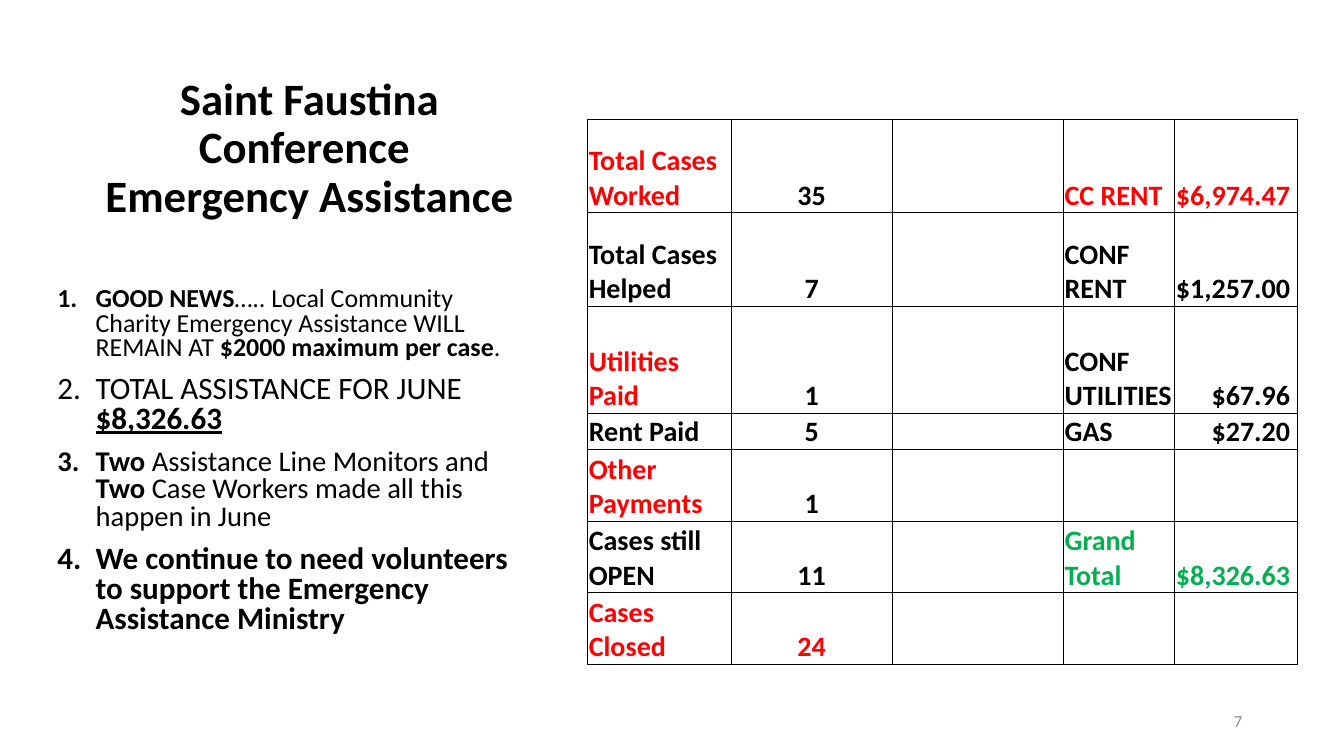
from pptx import Presentation
from pptx.util import Emu, Pt
from pptx.dml.color import RGBColor
from pptx.enum.text import MSO_ANCHOR, PP_ALIGN
from pptx.oxml.ns import qn
from lxml.etree import SubElement

RED, BLACK, GREEN, GREY = "FF0000", "000000", "00B050", "8C8C8C"
LEFT, MID, RIGHT = PP_ALIGN.LEFT, PP_ALIGN.CENTER, PP_ALIGN.RIGHT
TITLE = "Saint Faustina Conference \vEmergency Assistance"
NOTES = [
    (18.5, [("GOOD NEWS", "b"),
            ("….. Local Community Charity Emergency Assistance WILL REMAIN AT ", ""),
            ("$2000 maximum per case", "b"), (".", "")]),
    (22.2, [("TOTAL ASSISTANCE FOR JUNE ", ""), ("$8,326.63", "bu")]),
    (20.4, [("Two", "b"), (" Assistance Line Monitors and ", ""), ("Two", "b"),
            (" Case Workers made all this happen in June", "")]),
    (22.2, [("We continue to need volunteers to support the Emergency Assistance Ministry", "b")]),
]
CASES = [
    ("Total Cases Worked", RED, "35", BLACK, "CC RENT", "$6,974.47 ", RED),
    ("Total Cases Helped", BLACK, "7", BLACK, "CONF RENT", "$1,257.00 ", BLACK),
    ("Utilities Paid", RED, "1", BLACK, "CONF UTILITIES", "$67.96 ", BLACK),
    ("Rent Paid", BLACK, "5", BLACK, "GAS", "$27.20 ", BLACK),
    ("Other Payments", RED, "1", BLACK, "", "", BLACK),
    ("Cases still OPEN", BLACK, "11", BLACK, "Grand Total", "$8,326.63 ", GREEN),
    ("Cases Closed", RED, "24", RED, "", "", BLACK),
]
WIDTHS = [142, 160, 170, 110, 122]
HEIGHTS = [93, 93, 106, 36, 71, 71, 71]


def px(n):
    return Emu(n * 9144)


def hue(code):
    return RGBColor.from_string(code)


def style(para, size, color, bold=None, align=LEFT):
    para.alignment = align
    font = para.font
    font.name, font.size, font.bold = "Calibri", Pt(size), bold
    font.color.rgb = hue(color)


def box(slide, x, y, w, h, anchor):
    frame = slide.shapes.add_textbox(px(x), px(y), px(w), px(h)).text_frame
    frame.word_wrap = True
    frame.vertical_anchor = anchor
    return frame


def number(para):
    props = para._p.get_or_add_pPr()
    props.set("marL", str(px(38)))
    props.set("indent", str(-px(38)))
    SubElement(props, qn("a:buFont"), typeface="+mj-lt")
    SubElement(props, qn("a:buAutoNum"), type="arabicPeriod")


def border(cell):
    props = cell._tc.get_or_add_tcPr()
    for side in "LRTB":
        line = SubElement(props, qn("a:ln" + side), w=str(Pt(0.5)))
        fill = SubElement(line, qn("a:solidFill"))
        SubElement(fill, qn("a:srgbClr"), val=BLACK)


def add_notes(slide):
    frame = box(slide, 47, 280, 488, 362, MSO_ANCHOR.TOP)
    for i, (size, runs) in enumerate(NOTES):
        para = frame.add_paragraph() if i else frame.paragraphs[0]
        para.line_spacing = 0.8
        if i:
            para.space_before = Pt(10)
        number(para)
        style(para, size, BLACK)
        for text, marks in runs:
            run = para.add_run()
            run.text = text
            run.font.bold = "b" in marks
            if "u" in marks:
                run.font.underline = True


def add_cases(slide):
    table = slide.shapes.add_table(len(HEIGHTS), len(WIDTHS), px(583), px(118),
                                   px(sum(WIDTHS)), px(sum(HEIGHTS))).table
    table.first_row = table.horz_banding = False
    for col, w in zip(table.columns, WIDTHS):
        col.width = px(w)
    for row, h, case in zip(table.rows, HEIGHTS, CASES):
        row.height = px(h)
        label, tint, count, shade, kind, cost, tone = case
        parts = [(label, tint, LEFT), (count, shade, MID), ("", BLACK, LEFT),
                 (kind, tone, LEFT), (cost, tone, RIGHT)]
        for cell, (text, color, align) in zip(row.cells, parts):
            cell.margin_left = cell.margin_right = cell.margin_top = px(1)
            cell.margin_bottom = 0
            cell.vertical_anchor = MSO_ANCHOR.BOTTOM
            border(cell)
            cell.fill.background()
            cell.text = text
            style(cell.text_frame.paragraphs[0], 20, color, True, align)


def main():
    deck = Presentation()
    deck.slide_width, deck.slide_height = px(1333), px(750)
    slide = deck.slides.add_slide(deck.slide_layouts[6])
    head = box(slide, 92, 50, 430, 175, MSO_ANCHOR.BOTTOM).paragraphs[0]
    head.text = TITLE
    head.line_spacing = 0.9
    style(head, 32, BLACK, True, MID)
    add_notes(slide)
    page = box(slide, 942, 695, 300, 40, MSO_ANCHOR.MIDDLE).paragraphs[0]
    page.text = "7"
    style(page, 12, GREY, align=RIGHT)
    add_cases(slide)
    deck.save("out.pptx")


if __name__ == "__main__":
    main()
